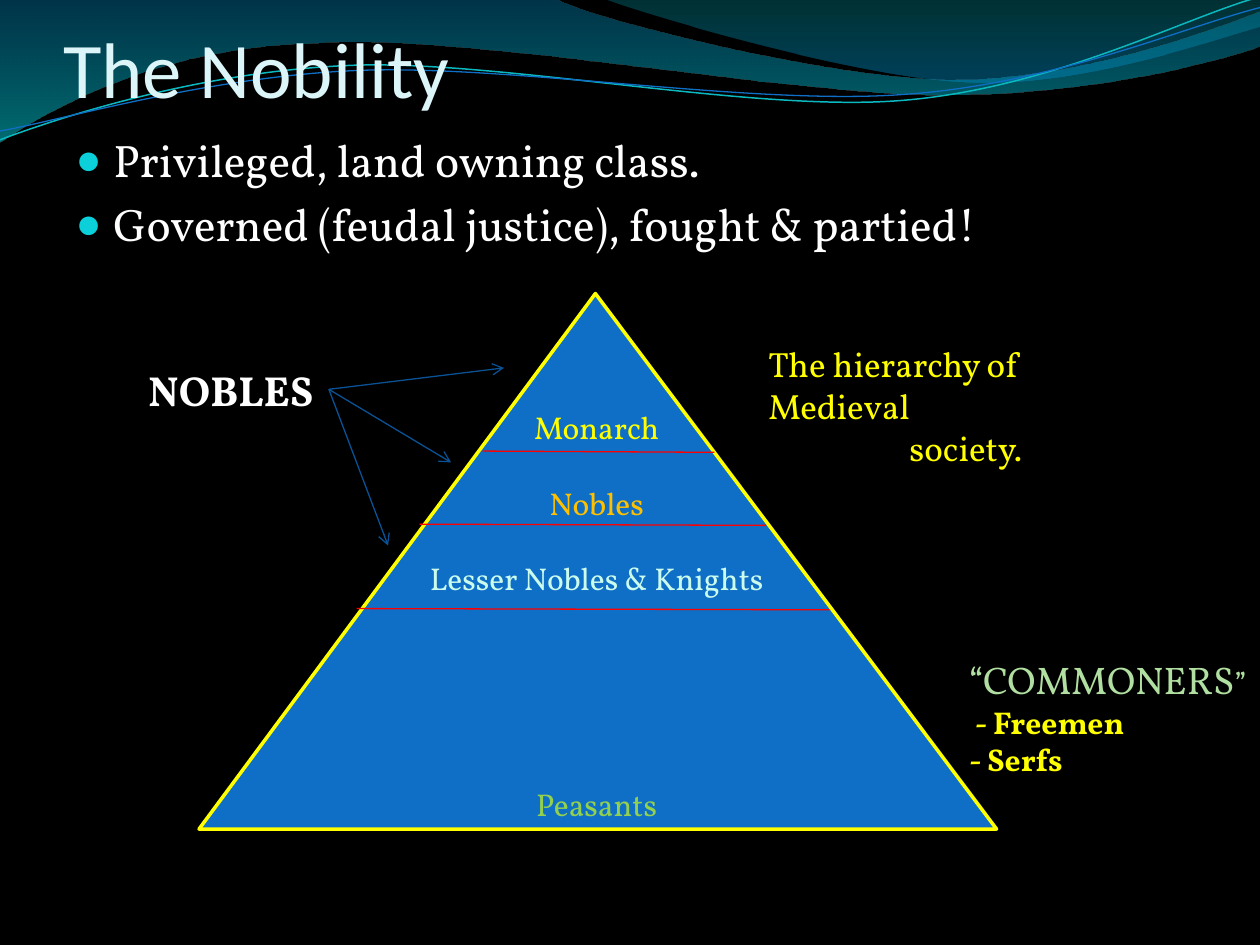
from lxml import etree
from pptx import Presentation
from pptx.dml.color import RGBColor
from pptx.enum import shapes, text
from pptx.oxml.ns import qn
from pptx.util import Inches, Pt

BLACK = RGBColor(0x00, 0x00, 0x00)
WHITE = RGBColor(0xFF, 0xFF, 0xFF)
PALE_CYAN = RGBColor(0xDB, 0xF5, 0xF9)
CYAN = RGBColor(0x0B, 0xD0, 0xD9)
WAVE_CYAN = RGBColor(0x0A, 0xB8, 0xBF)
BLUE = RGBColor(0x0F, 0x6F, 0xC6)
DARK_BLUE = RGBColor(0x09, 0x52, 0x95)
YELLOW = RGBColor(0xFF, 0xFF, 0x00)
RED = RGBColor(0xFF, 0x00, 0x00)
ORANGE = RGBColor(0xFF, 0xC0, 0x00)
MINT = RGBColor(0xCA, 0xFB, 0xED)
GREEN = RGBColor(0x92, 0xD0, 0x50)
PALE_GREEN = RGBColor(0xB0, 0xDF, 0xA1)
SEA_DEEP, SEA_LIGHT = RGBColor(0x00, 0x74, 0xA1), RGBColor(0x00, 0xC6, 0xCF)
CREST_TEAL, CREST_BLUE = RGBColor(0x00, 0xA1, 0xA9), RGBColor(0x00, 0x8B, 0xBF)
LINE_HEIGHT = 21.5  # points, for the 18 point labels of the pyramid

# Each path is a start point, then points (2 numbers) or Bezier curves (6 numbers).
SEA = [(0, 0), (4.4, -0.01), (4.76, 0.17, 6.64, 0.63, 7.58, 0.63),
       (8.53, 0.63, 9.58, 0.26, 10, 0.09), (10.01, 0.36),
       (9.83, 0.44, 8.7, 0.76, 7.46, 0.75), (6.22, 0.75, 3.82, 0.28, 2.57, 0.34),
       (1.29, 0.36, 0.46, 0.83, -0.01, 1.13)]
CREST = [(4.79, -0.01), (5.09, 0.11, 6.82, 0.62, 7.69, 0.65),
         (8.56, 0.69, 9.61, 0.32, 10, 0.21), (10, 0)]
CYAN_WAVE = [(0, 1.11), (0.48, 0.93, 1.58, 0.57, 2.77, 0.52),
             (3.95, 0.47, 5.93, 0.89, 7.13, 0.8), (8.33, 0.71, 9.38, 0.15, 9.98, -0.02)]
BLUE_WAVE = [(0, 1.04), (0.47, 0.96, 1.64, 0.61, 2.83, 0.56),
             (4.03, 0.51, 5.97, 0.84, 7.17, 0.75), (8.36, 0.67, 9.41, 0.21, 10, 0.06)]


def add_path(slide, path, close):
    """Draw all points as straight segments, then join each curve's three into one."""
    points = [(Inches(x), Inches(y)) for segment in path
              for x, y in zip(segment[::2], segment[1::2])]
    builder = slide.shapes.build_freeform(*points[0])
    builder.add_line_segments(points[1:], close=close)
    shape = builder.convert_to_shape()
    shape.shadow.inherit = False
    lines = iter(list(shape._element.iter(qn("a:lnTo"))))
    for segment in path[1:]:
        first = next(lines)
        if len(segment) == 6:
            first.tag = qn("a:cubicBezTo")
            for line in (next(lines), next(lines)):
                first.append(line[0])
                line.getparent().remove(line)
    return shape


def add_water(slide, path, stops):
    """Add a closed shape shaded downwards; stops are (position, colour, opacity %)."""
    shape = add_path(slide, path, close=True)
    shape.line.fill.background()
    shape.fill.gradient()
    shape.fill.gradient_angle = 270
    for stop, (position, color, _) in zip(shape.fill.gradient_stops, stops):
        stop.position = position
        stop.color.rgb = color
    gradient = shape._element.spPr.find(qn("a:gradFill"))
    for color_element, (_, _, opacity) in zip(gradient.iter(qn("a:srgbClr")), stops):
        etree.SubElement(color_element, qn("a:alpha"), val=str(opacity * 1000))


def add_waves(slide):
    add_water(slide, SEA, [(0, SEA_DEEP, 45), (1, SEA_LIGHT, 55)])
    add_water(slide, CREST, [(0, CREST_TEAL, 30), (0.8, CREST_BLUE, 45)])
    for path, color, width in ((CYAN_WAVE, WAVE_CYAN, 0.85), (BLUE_WAVE, BLUE, 0.75)):
        wave = add_path(slide, path, close=False)
        wave.fill.background()
        wave.line.color.rgb = color
        wave.line.width = Pt(width)


def write(paragraph, content, size=18, color=WHITE, bold=None, font="Vollkorn"):
    run = paragraph.add_run()
    run.text = content
    run.font.size = Pt(size)
    run.font.name = font
    run.font.bold = bold
    run.font.color.rgb = color


def next_paragraph(frame):
    """Give the first paragraph while it is empty, then new ones."""
    first = frame.paragraphs[0]
    return frame.add_paragraph() if first.runs else first


def place(shape, left, top, width, height):
    shape.left, shape.top = Inches(left), Inches(top)
    shape.width, shape.height = Inches(width), Inches(height)


def bring_to_front(shape):
    shape._element.getparent().append(shape._element)


def fill_title(title, box):
    place(title, *box)
    bring_to_front(title)
    frame = title.text_frame
    frame.auto_size = text.MSO_AUTO_SIZE.NONE
    frame.vertical_anchor = text.MSO_ANCHOR.BOTTOM
    frame.margin_left = frame.margin_right = frame.margin_bottom = 0
    frame.paragraphs[0].alignment = text.PP_ALIGN.LEFT
    write(frame.paragraphs[0], "The Nobility", size=45, color=PALE_CYAN, font="Calibri")


def fill_body(body, box, items):
    place(body, *box)
    bring_to_front(body)
    body.text_frame.auto_size = text.MSO_AUTO_SIZE.NONE
    for item in items:
        paragraph = next_paragraph(body.text_frame)
        write(paragraph, item, size=26)
        properties = paragraph._p.get_or_add_pPr()
        properties.set("marL", str(Inches(0.3)))
        properties.set("indent", str(-Inches(0.3)))
        bullet_color = etree.SubElement(properties, qn("a:buClr"))
        etree.SubElement(bullet_color, qn("a:srgbClr"), val=str(CYAN))
        etree.SubElement(properties, qn("a:buSzPct"), val="95000")
        etree.SubElement(properties, qn("a:buChar"), char="●")


def add_line(slide, start, end, color, arrow=False):
    line = slide.shapes.add_connector(
        shapes.MSO_CONNECTOR.STRAIGHT, *(Inches(value) for value in (*start, *end)))
    line.line.color.rgb = color
    line.line.width = Pt(0.75)
    if arrow:
        etree.SubElement(line.line._get_or_add_ln(), qn("a:tailEnd"), type="arrow")
    etree.SubElement(line._element.spPr, qn("a:effectLst"))
    return line


def add_pyramid(slide, left, top, width, height):
    pyramid = slide.shapes.add_shape(
        shapes.MSO_SHAPE.ISOSCELES_TRIANGLE,
        *(Inches(value) for value in (left, top, width, height)))
    pyramid.adjustments[0] = 0.497
    pyramid.shadow.inherit = False
    pyramid.fill.solid()
    pyramid.fill.fore_color.rgb = BLUE
    pyramid.line.color.rgb = YELLOW
    pyramid.line.width = Pt(2)
    frame = pyramid.text_frame
    frame.word_wrap = True
    frame.vertical_anchor = text.MSO_ANCHOR.BOTTOM
    for label, color, lines_above in (("Monarch", YELLOW, 0), ("Nobles", ORANGE, 1),
                                      ("Lesser Nobles & Knights", MINT, 1),
                                      ("Peasants", GREEN, 5)):
        paragraph = next_paragraph(frame)
        paragraph.alignment = text.PP_ALIGN.CENTER
        paragraph.space_before = Pt(lines_above * LINE_HEIGHT)
        write(paragraph, label, color=color)
    for x1, x2, y in ((2.25, 4.09, 1.25), (1.75, 4.5, 1.83), (1.25, 5, 2.5)):
        add_line(slide, (left + x1, top + y), (left + x2, top + y + 0.01), RED)


def add_label(slide, box, paragraphs, wrap=False):
    """Add a text box; each paragraph is a list of (text, format) runs."""
    label = slide.shapes.add_textbox(*(Inches(value) for value in box))
    frame = label.text_frame
    frame.word_wrap = wrap
    frame.auto_size = text.MSO_AUTO_SIZE.SHAPE_TO_FIT_TEXT
    for runs in paragraphs:
        paragraph = next_paragraph(frame)
        for content, style in runs:
            write(paragraph, content, **style)
    return label


def add_nobles(slide, left, top):
    label = add_label(slide, (left, top, 1.53, 0.5),
                      [[("NOBLES", dict(size=24, bold=True))]])
    start = (left + 1.53, top + 0.25)
    for x, y in ((2.92, 0.08), (2.5, 0.83), (2, 1.49)):
        arrow = add_line(slide, start, (left + x, top + y), DARK_BLUE, arrow=True)
        arrow.begin_connect(label, 3)


def main():
    presentation = Presentation()
    presentation.slide_width, presentation.slide_height = Inches(10), Inches(7.5)
    slide = presentation.slides.add_slide(presentation.slide_layouts[1])
    slide.background.fill.solid()
    slide.background.fill.fore_color.rgb = BLACK

    add_waves(slide)
    fill_title(slide.shapes.title, (0.5, 0.24, 9, 0.67))
    fill_body(slide.placeholders[1], (0.5, 1, 9, 5.92),
              ["Privileged, land owning class.",
               "Governed (feudal justice), fought & partied!"])
    add_pyramid(slide, 1.58, 2.33, 6.33, 4.25)

    note = dict(size=20, color=YELLOW)
    hierarchy = add_label(slide, (6, 2.67, 3.33, 0.77),
                          [[("The hierarchy of Medieval", note)], [("society.", note)]],
                          wrap=True)
    hierarchy.text_frame.paragraphs[1].alignment = text.PP_ALIGN.CENTER
    add_nobles(slide, 1.08, 2.84)
    group = dict(color=YELLOW, bold=True)
    add_label(slide, (7.59, 5.16, 2.41, 1.08),
              [[("“COMMONERS", dict(size=22, color=PALE_GREEN)),
                ("”", dict(color=PALE_GREEN))],
               [(" - Freemen", group)], [("- Serfs", group)]])
    presentation.save("out.pptx")


if __name__ == "__main__":
    main()
